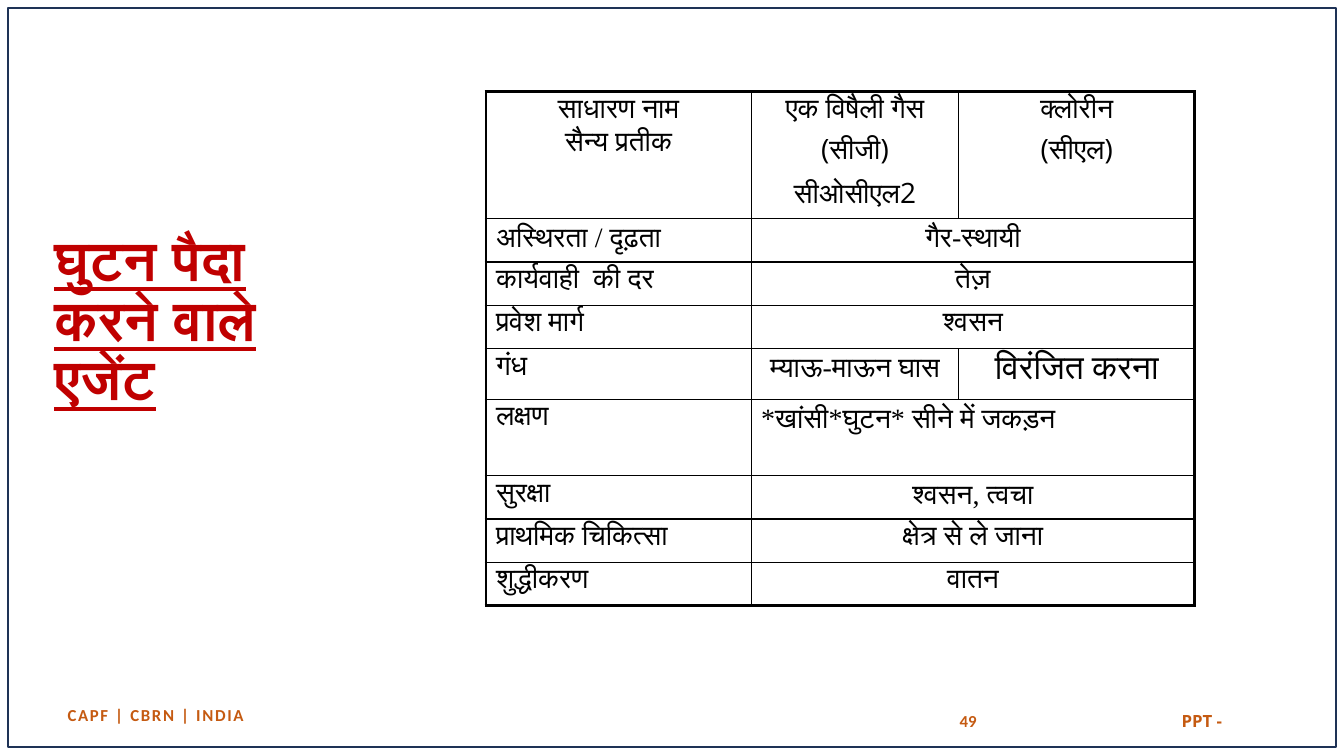
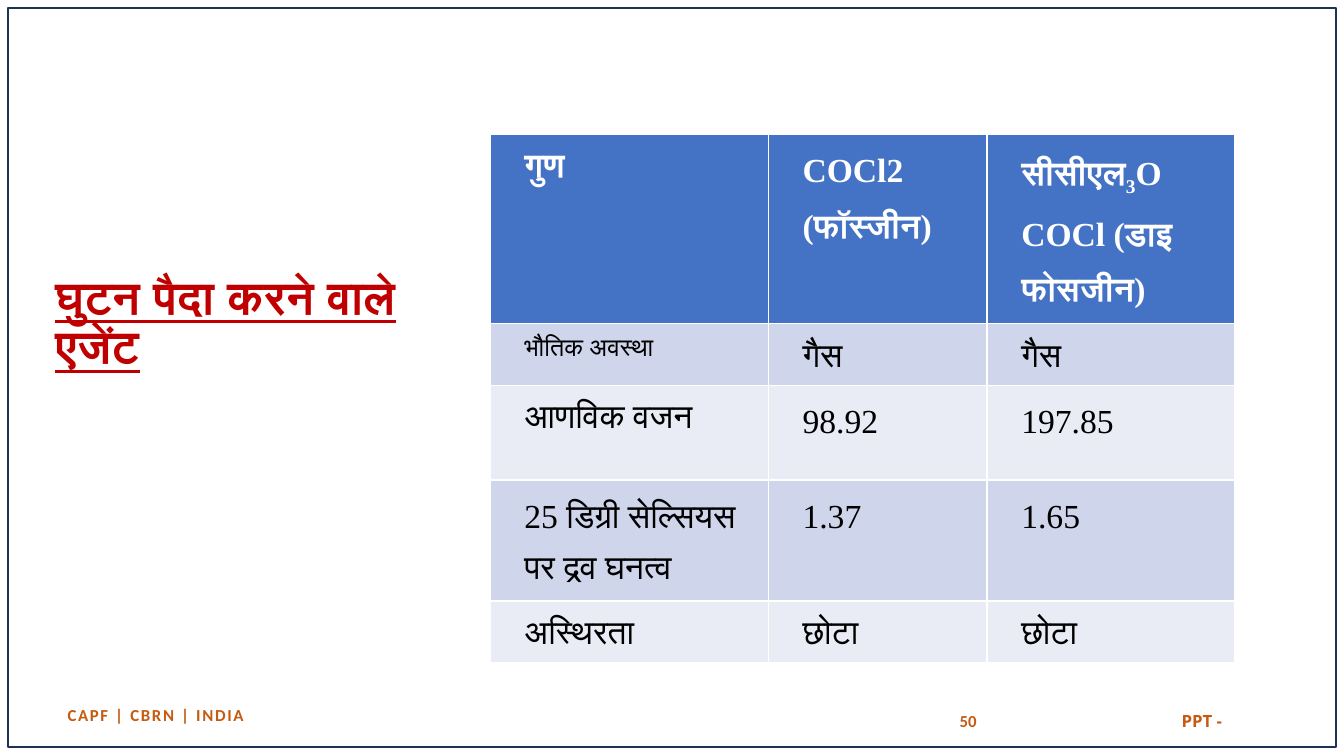
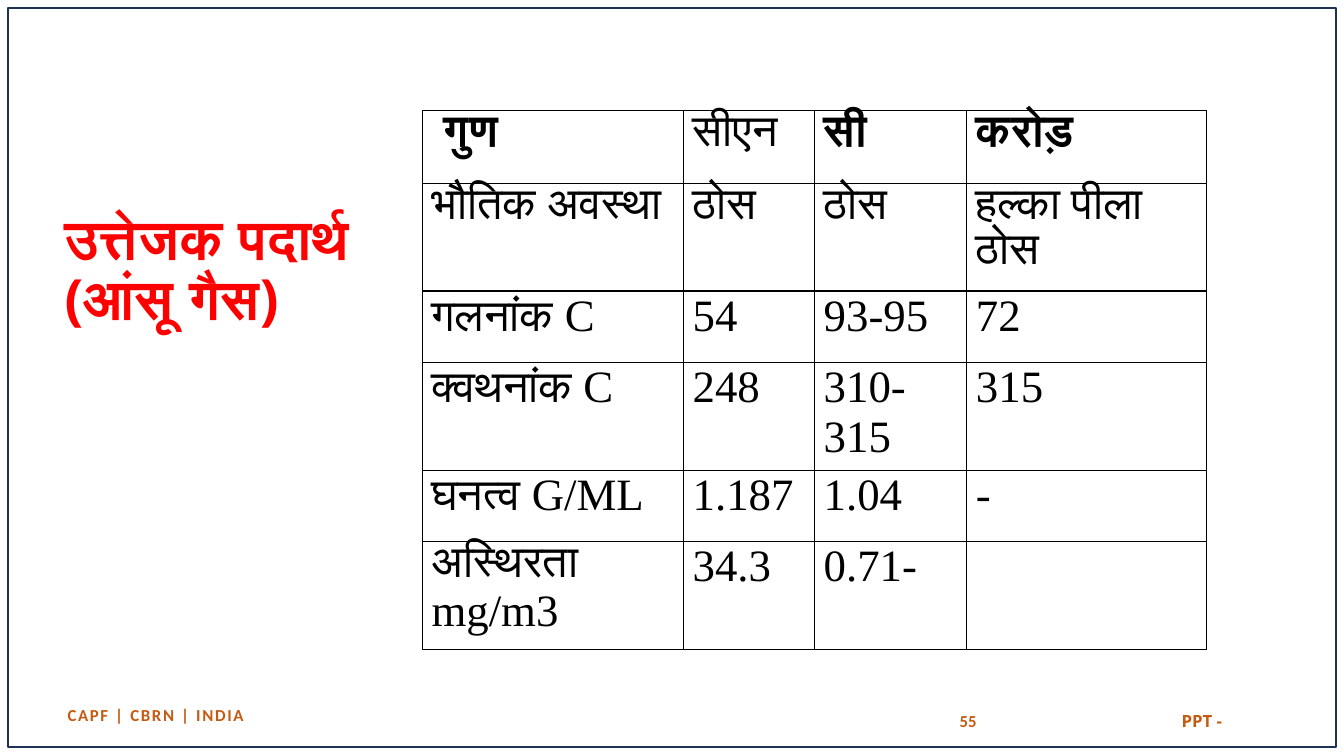
from pptx import Presentation
from pptx.dml.color import RGBColor
from pptx.enum.shapes import MSO_SHAPE
from pptx.enum.text import MSO_ANCHOR, MSO_AUTO_SIZE, PP_ALIGN
from pptx.oxml.ns import qn
from pptx.util import Inches, Pt
from lxml import etree

RECTANGLE = MSO_SHAPE.RECTANGLE
TOP, MIDDLE = MSO_ANCHOR.TOP, MSO_ANCHOR.MIDDLE
LEFT, CENTER = PP_ALIGN.LEFT, PP_ALIGN.CENTER
NO_AUTOFIT = MSO_AUTO_SIZE.NONE

NAVY = RGBColor(0x1E, 0x32, 0x56)
ORANGE = RGBColor(0xC5, 0x5A, 0x11)
DARK_RED = RGBColor(0xC0, 0x00, 0x00)
RED = RGBColor(0xFF, 0x00, 0x00)
BLACK = RGBColor(0x00, 0x00, 0x00)
WHITE = RGBColor(0xFF, 0xFF, 0xFF)
HEADER_BLUE = RGBColor(0x44, 0x72, 0xC4)
BAND_DARK = RGBColor(0xCF, 0xD5, 0xEA)
BAND_LIGHT = RGBColor(0xE9, 0xEB, 0xF5)

SANS, SERIF, FOOTER = "Open Sans", "Times New Roman", "Calibri"
FOOTER_FONT = {"size": Pt(12), "name": FOOTER, "color": ORANGE, "bold": True}
TITLE_FONT = {"size": Pt(39.6), "name": SANS, "color": DARK_RED, "bold": True, "underline": True}
FOOTER_INSETS = (0.09, 0.09, 0.09, 0.09)
XML_ATTRIBUTES = ("spc", "baseline")


def style_span(span, font_format):
    """Apply a dict of font values to one run."""
    for name, value in font_format.items():
        if name == "color":
            span.font.color.rgb = value
        elif name in XML_ATTRIBUTES:
            span._r.get_or_add_rPr().set(name, str(value))
        else:
            setattr(span.font, name, value)


def write_text(frame, content, font_format, para_format, indent=0):
    """Write a string, or a list of (text, overrides) spans, with \\n between paragraphs."""
    spans = [(content, {})] if isinstance(content, str) else content
    para = frame.paragraphs[0]
    for text, overrides in spans:
        for index, line in enumerate(text.split("\n")):
            if index:
                para = frame.add_paragraph()
            if line:
                span = para.add_run()
                span.text = line
                style_span(span, {**font_format, **overrides})
    for index, para in enumerate(frame.paragraphs):
        for name, value in para_format.items():
            if index or name != "space_before":
                setattr(para, name, value)
        if indent:
            properties = para._p.get_or_add_pPr()
            properties.set("marL", str(Inches(indent)))
            properties.set("indent", "0")


def set_insets(target, insets):
    """Set left, top, right and bottom margins of a text frame or cell."""
    for side, value in zip(("left", "top", "right", "bottom"), insets):
        setattr(target, f"margin_{side}", Inches(value))


def add_label(page, at, text, font_format, align=CENTER, insets=FOOTER_INSETS, anchor=TOP):
    """Add a text box with one line of footer text."""
    frame = page.shapes.add_textbox(*map(Inches, at)).text_frame
    frame.word_wrap = True
    frame.vertical_anchor = anchor
    set_insets(frame, insets)
    write_text(frame, text, font_format, {"alignment": align})


def add_page(deck, number, title, title_at, title_format):
    """Add a slide with the shared frame, footers, number and title."""
    page = deck.slides.add_slide(deck.slide_layouts[5])
    add_label(page, (0.17, 6.9, 2.75, 0.37), "CAPF | CBRN | INDIA", {**FOOTER_FONT, "spc": 120})
    add_label(page, (11.42, 6.96, 1, 0.37), "PPT -", {**FOOTER_FONT, "name": SANS})
    heading = page.shapes.title
    for name, value in zip(("left", "top", "width", "height"), title_at):
        setattr(heading, name, Inches(value))
    frame = heading.text_frame
    frame.auto_size = NO_AUTOFIT
    frame.word_wrap = True
    frame.vertical_anchor = MIDDLE
    write_text(frame, title, {**TITLE_FONT, **title_format}, {"alignment": LEFT, "line_spacing": 0.9})
    border = page.shapes.add_shape(RECTANGLE, *map(Inches, (0.08, 0.08, 13.17, 7.33)))
    border.shadow.inherit = False
    border.fill.background()
    border.line.color.rgb = NAVY
    border.line.width = Pt(1)
    add_label(page, (9.42, 6.95, 3, 0.4), str(number), FOOTER_FONT, LEFT, (0.1, 0.05, 0.1, 0.05), MIDDLE)
    return page


def set_borders(cell, color, widths):
    """Draw the left, right, top and bottom borders of a cell ahead of its fill."""
    properties = cell._tc.get_or_add_tcPr()
    for position, (side, width) in enumerate(zip("LRTB", widths)):
        line = etree.Element(qn(f"a:ln{side}"), w=str(Pt(width)))
        fill = etree.SubElement(line, qn("a:solidFill"))
        etree.SubElement(fill, qn("a:srgbClr"), val=str(color))
        properties.insert(position, line)


def add_grid(page, at, columns, heights, rows, font_format, para_format, insets,
             border=BLACK, outer=1, fills=None, indent=0):
    """Add a table at (left, top, height); a short row merges its last cell to the right."""
    left, top, full_height = at
    size = (left, top, sum(columns), full_height)
    holder = page.shapes.add_table(len(rows), len(columns), *map(Inches, size))
    table = holder.table
    table.first_row = False
    table.horz_banding = False
    for column, width in zip(table.columns, columns):
        column.width = Inches(width)
    for row, height in zip(table.rows, heights):
        row.height = Inches(height)
    holder.height = Inches(full_height)
    last_row, last_column = len(rows) - 1, len(columns) - 1
    for r, contents in enumerate(rows):
        if len(contents) <= last_column:
            table.cell(r, len(contents) - 1).merge(table.cell(r, last_column))
        for c in range(len(columns)):
            cell = table.cell(r, c)
            if fills:
                cell.fill.solid()
                cell.fill.fore_color.rgb = fills[r]
            else:
                cell.fill.background()
            end = c + cell.span_width - 1 if cell.is_merge_origin else c
            edges = (c == 0, end == last_column, r == 0, r == last_row)
            set_borders(cell, border, [outer if edge else 1 for edge in edges])
            set_insets(cell, insets)
            if c < len(contents):
                write_text(cell.text_frame, contents[c], font_format, para_format, indent)
    return table


def add_agent_page(deck):
    """Build the slide on the behaviour of choking agents."""
    page = add_page(deck, 49, "घुटन पैदा करने वाले एजेंट", (0.44, 2.47, 3.22, 1.45), {})
    sans = {"name": SANS}
    rows = [
        ([("साधारण नाम\nसैन्य प्रतीक", sans)],
         [("एक विषैली गैस\n(सीजी)\nसीओसीएल2", sans)],
         [("क्लोरीन\n(सीएल)", sans)]),
        ("अस्थिरता / दृढ़ता", "गैर-स्थायी"),
        ("कार्यवाही  की दर", "तेज़"),
        ("प्रवेश मार्ग", "श्वसन"),
        ([("गंध", sans)], "म्याऊ-माऊन घास", [("विरंजित करना", {"size": Pt(24)})]),
        ("लक्षण", "*खांसी*घुटन* सीने में जकड़न"),
        ("सुरक्षा", "श्वसन, त्वचा"),
        ("प्राथमिक चिकित्सा", "क्षेत्र से ले जाना"),
        ("शुद्धीकरण", "वातन"),
    ]
    table = add_grid(
        page, (4.82, 0.91, 5.1), (2.63, 2.06, 2.34),
        (1.26, 0.43, 0.43, 0.43, 0.5, 0.76, 0.43, 0.43, 0.43), rows,
        {"size": Pt(20), "name": SERIF, "color": BLACK},
        {"alignment": CENTER, "space_before": Pt(4)}, (0.1, 0.04, 0.1, 0.04), outer=2.25)
    symptoms = table.cell(5, 1)
    row_labels = [table.cell(r, 0) for r in range(1, len(rows))]
    for cell in row_labels + [symptoms]:
        cell.text_frame.paragraphs[0].alignment = LEFT


def add_property_page(deck):
    """Build the slide on the physical properties of choking agents."""
    page = add_page(deck, 50, "घुटन पैदा करने वाले एजेंट", (0.45, 2.49, 4.04, 1.45), {"size": Pt(33)})
    header = {"color": WHITE, "bold": True}
    rows = [
        ([("गुण", header)], [("COCl2 (फॉस्जीन)", header)],
         [("सीसीएल", header), ("3", {**header, "baseline": -25000}), ("O COCl (डाइ फोसजीन)", header)]),
        ([("भौतिक अवस्था", {"size": Pt(18), "name": FOOTER})], "गैस", "गैस"),
        ("आणविक वजन", "98.92", "197.85"),
        ("25 डिग्री सेल्सियस पर द्रव घनत्व", "1.37", "1.65"),
        ("अस्थिरता", "छोटा", "छोटा"),
    ]
    add_grid(
        page, (4.86, 1.33, 5.66), (2.76, 2.17, 2.46), (1.31, 0.61, 0.94, 0.89, 0.61), rows,
        {"size": Pt(24), "name": SERIF, "color": BLACK},
        {"line_spacing": 1.5, "space_after": Pt(6)}, (0.09, 0, 0.09, 0),
        border=WHITE, fills=[HEADER_BLUE] + [BAND_DARK, BAND_LIGHT] * 2, indent=0.25)


def add_irritant_page(deck):
    """Build the slide on tear gas properties."""
    page = add_page(deck, 55, "उत्तेजक पदार्थ\n(आंसू गैस)", (0.54, 1.97, 4.71, 1.45),
                    {"color": RED, "underline": False})
    bold = {"bold": True}
    rows = [
        ([(" गुण", bold)], "सीएन", [("सी", bold)], [("करोड़", bold)]),
        ("भौतिक अवस्था", "ठोस", "ठोस", "हल्का पीला ठोस"),
        ("गलनांक C", "54", "93-95", "72"),
        ("क्वथनांक C", "248", "310-315", "315"),
        ("घनत्व G/ML", "1.187", "1.04", "-"),
        ("अस्थिरता mg/m3", "34.3", "0.71-", ""),
    ]
    add_grid(
        page, (4.19, 1.1, 5.33), (2.59, 1.3, 1.51, 2.38), (0.72, 0.99, 0.71, 0.71, 0.71, 0.99), rows,
        {"size": Pt(32), "name": SERIF, "color": BLACK}, {}, (0.09, 0, 0.09, 0))


def main():
    """Build and save the deck."""
    deck = Presentation()
    deck.slide_width = Inches(13.33)
    deck.slide_height = Inches(7.5)
    add_agent_page(deck)
    add_property_page(deck)
    add_irritant_page(deck)
    deck.save("out.pptx")


if __name__ == "__main__":
    main()
